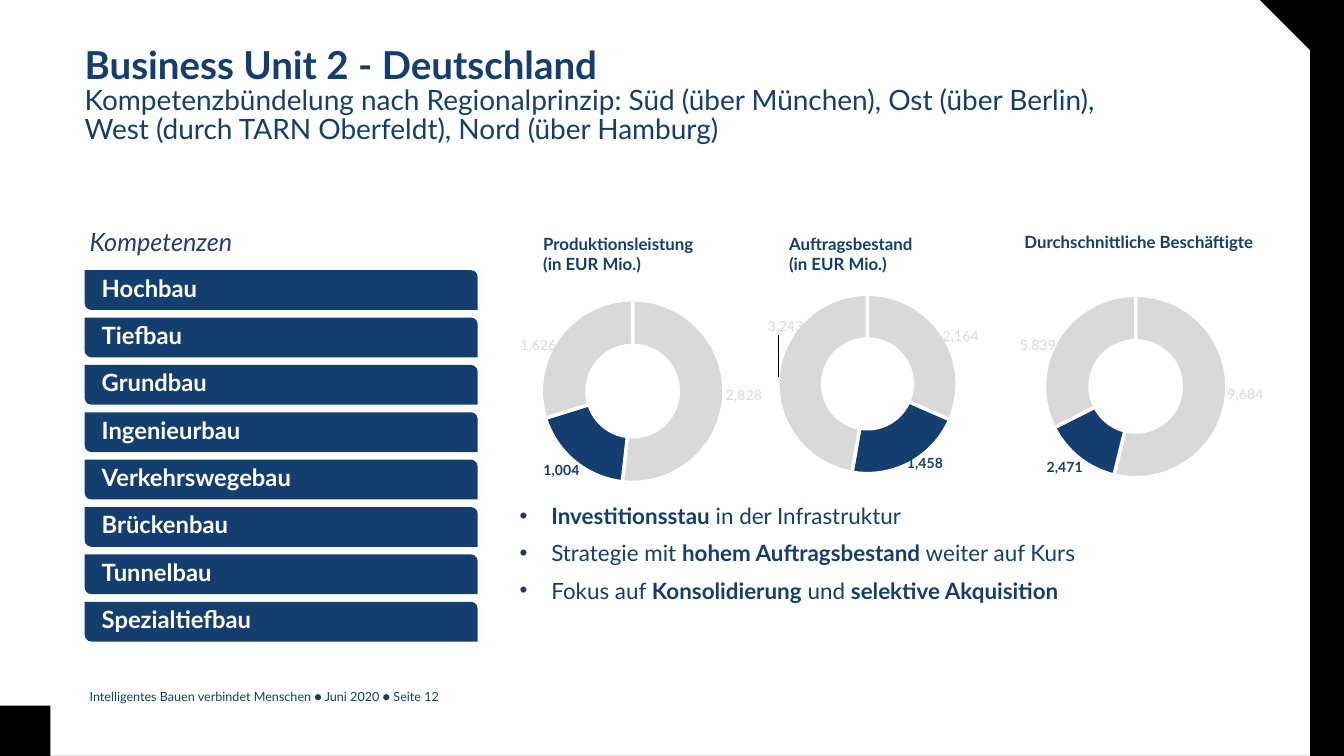
from math import cos, pi, radians, sin

from lxml.etree import SubElement
from pptx import Presentation
from pptx.chart.data import CategoryChartData
from pptx.dml.color import RGBColor
from pptx.enum.chart import XL_CHART_TYPE
from pptx.enum.shapes import MSO_SHAPE
from pptx.enum.text import MSO_ANCHOR, MSO_AUTO_SIZE, PP_ALIGN
from pptx.oxml.ns import qn
from pptx.util import Inches, Pt

FONT = "Lato"
NAVY, GREY, WHITE, BLACK = "143E6F", "D9D9D9", "FFFFFF", "000000"
CHART_WIDTH, CHART_HEIGHT = 5.36, 3.9
RING_RADIUS = 1.31  # middle of the doughnut ring, where labels sit by default

COMPETENCES = ["Hochbau", "Tiefbau", "Grundbau", "Ingenieurbau",
               "Verkehrswegebau", "Brückenbau", "Tunnelbau", "Spezialtiefbau"]
BULLETS = [
    [("Investitionsstau", True), (" in der Infrastruktur", False)],
    [("Strategie mit ", False), ("hohem Auftragsbestand", True), (" weiter auf Kurs", False)],
    [("Fokus auf ", False), ("Konsolidierung", True), (" und ", False),
     ("selektive Akquisition", True)],
]
# heading, heading place, chart place, values, label centres from the chart centre
KEY_FIGURES = [
    ("Produktionsleistung\v(in EUR Mio.)", (10.68, 4.58), (9.91, 5.81),
     (2828, 1004, 1626), ((2.16, 0.08), (-1.38, 1.53), (-1.83, -0.89))),
    ("Auftragsbestand\v(in EUR Mio.)", (15.56, 4.58), (14.5, 5.7),
     (2164, 1458, 3243), ((1.83, -0.94), (1.13, 1.54), (-1.6, -1.14))),
    ("Durchschnittliche Beschäftigte", (20.23, 4.54), (19.89, 5.72),
     (9684, 2471, 5839), ((2.13, 0.15), (-1.38, 1.56), (-1.9, -0.8))),
]


def color(value):
    return RGBColor.from_string(value)


def paint(shape, value):
    shape.shadow.inherit = False
    shape.fill.solid()
    shape.fill.fore_color.rgb = color(value)
    shape.line.fill.background()


def format_font(font, size, value=NAVY, bold=False, italic=False):
    font.name, font.size = FONT, Pt(size)
    font.bold, font.italic = bold, italic
    font.color.rgb = color(value)


def set_box(shape, left, top, width, height):
    shape.left, shape.top = Inches(left), Inches(top)
    shape.width, shape.height = Inches(width), Inches(height)


def clear_margins(text_frame):
    text_frame.margin_left = text_frame.margin_right = 0
    text_frame.margin_top = text_frame.margin_bottom = 0
    text_frame.auto_size = MSO_AUTO_SIZE.NONE
    text_frame.vertical_anchor = MSO_ANCHOR.TOP


def add_text(slide, text, left, top, width, height, size, **style):
    box = slide.shapes.add_textbox(Inches(left), Inches(top), Inches(width), Inches(height))
    box.text_frame.word_wrap = True
    paragraph = box.text_frame.paragraphs[0]
    paragraph.text = text
    for run in paragraph.runs:
        format_font(run.font, size, **style)


def add_frame(slide, width, height, side=0.21, edge=0.14, radius=2.15):
    """Black border whose opening is rounded at top right and bottom left."""
    def arc(x, y, start):
        angles = [radians(start + 3 * step) for step in range(31)]
        return [(x + radius * cos(a), y + radius * sin(a)) for a in angles]

    opening = [(side, edge)]
    opening += arc(width - side - radius, edge + radius, 270)
    opening += [(width - side, height - edge)]
    opening += arc(side + radius, height - edge - radius, 90)
    builder = slide.shapes.build_freeform(0, 0, scale=Inches(1))
    builder.add_line_segments([(width, 0), (width, height), (0, height)])
    builder.move_to(*opening[0])
    builder.add_line_segments(opening[1:])
    paint(builder.convert_to_shape(), BLACK)


def fill_title(title, left, top, width, height):
    set_box(title, left, top, width, height)
    clear_margins(title.text_frame)
    paragraph = title.text_frame.paragraphs[0]
    paragraph.text = ("Business Unit 2 - Deutschland\v"
                      "Kompetenzbündelung nach Regionalprinzip: Süd (über München), "
                      "Ost (über Berlin),\v"
                      "West (durch TARN Oberfeldt), Nord (über Hamburg)")
    paragraph.alignment = PP_ALIGN.LEFT
    paragraph.line_spacing = 0.85
    heading, *subtitle = paragraph.runs
    format_font(heading.font, 55, bold=True)
    for run in subtitle:
        format_font(run.font, 40)


def add_competences(slide, left, top, width, bar_height=0.79, pitch=0.94):
    add_text(slide, "Kompetenzen", left, top, 3.25, 0.71, 36, value="273D71", italic=True)
    for index, name in enumerate(COMPETENCES):
        bar = slide.shapes.add_shape(
            MSO_SHAPE.ROUND_2_DIAG_RECTANGLE, Inches(left),
            Inches(top + 0.92 + index * pitch), Inches(width), Inches(bar_height))
        bar.adjustments[0], bar.adjustments[1] = 0, 0.17
        paint(bar, NAVY)
        text_frame = bar.text_frame
        text_frame.margin_left = Inches(0.3)
        text_frame.margin_top, text_frame.margin_bottom = 0, Inches(0.1)
        text_frame.vertical_anchor = MSO_ANCHOR.MIDDLE
        text_frame.text = name
        text_frame.paragraphs[0].alignment = PP_ALIGN.LEFT
        format_font(text_frame.paragraphs[0].runs[0].font, 34, WHITE, bold=True)


def move_label(label, x, y):
    """Shift a data label from its default place by a share of the chart size."""
    element = label._get_or_add_dLbl()
    for old in element.findall(qn("c:layout")):
        element.remove(old)
    layout = SubElement(element, qn("c:layout"))
    manual = SubElement(layout, qn("c:manualLayout"))
    for axis, shift in (("x", x), ("y", y)):
        SubElement(manual, qn(f"c:{axis}")).set("val", f"{shift:.3f}")
    element.insert(1, layout)


def add_doughnut(slide, left, top, values, label_centres):
    data = CategoryChartData(number_format="#,##0")
    data.categories = ["1", "2", "3"]
    data.add_series("Series 1", values)
    chart = slide.shapes.add_chart(
        XL_CHART_TYPE.DOUGHNUT, Inches(left), Inches(top),
        Inches(CHART_WIDTH), Inches(CHART_HEIGHT), data).chart
    chart.has_legend = chart.has_title = False
    chart.font.name, chart.font.size = FONT, Pt(20)
    plot = chart.plots[0]
    plot.vary_by_categories = False
    plot._element.find(qn("c:holeSize")).set("val", "70")

    passed = 0
    for index, (value, (x, y)) in enumerate(zip(values, label_centres)):
        point = plot.series[0].points[index]
        shade = NAVY if index == 1 else GREY
        point.format.fill.solid()
        point.format.fill.fore_color.rgb = color(shade)
        point.format.line.color.rgb = color(WHITE)
        point.format.line.width = Pt(5)
        format_font(point.data_label.font, 20, shade, bold=index == 1)
        angle = 2 * pi * (passed + value / 2) / sum(values)
        move_label(point.data_label, (x - RING_RADIUS * sin(angle)) / CHART_WIDTH,
                   (y + RING_RADIUS * cos(angle)) / CHART_HEIGHT)
        passed += value


def add_key_figures(slide):
    for heading, heading_place, chart_place, values, label_centres in KEY_FIGURES:
        add_doughnut(slide, *chart_place, values, label_centres)
        add_text(slide, heading, *heading_place, 5.02, 0.91, 24, bold=True)


def fill_bullets(body, left, top, width, height):
    set_box(body, left, top, width, height)
    clear_margins(body.text_frame)
    for index, parts in enumerate(BULLETS):
        text_frame = body.text_frame
        paragraph = text_frame.add_paragraph() if index else text_frame.paragraphs[0]
        properties = paragraph._p.get_or_add_pPr()
        properties.set("marL", str(Inches(0.63)))
        properties.set("indent", str(-Inches(0.63)))
        SubElement(properties, qn("a:buFont")).set("typeface", "Arial")
        SubElement(properties, qn("a:buChar")).set("char", "•")
        paragraph.space_before = Pt(15 if index else 0)
        for text, bold in parts:
            run = paragraph.add_run()
            run.text = text
            format_font(run.font, 32, bold=bold)


def main():
    presentation = Presentation()
    presentation.slide_width, presentation.slide_height = Inches(26.67), Inches(15)
    slide = presentation.slides.add_slide(presentation.slide_layouts[1])
    add_frame(slide, 26.67, 15)
    fill_title(slide.shapes.title, 1.68, 0.96, 23.31, 1.73)
    add_competences(slide, 1.68, 4.44, 7.8)
    add_key_figures(slide)
    fill_bullets(slide.placeholders[1], 10.31, 9.96, 13.99, 1.9)
    add_text(slide, "Intelligentes Bauen verbindet Menschen ● Juni 2020 ● Seite 12",
             1.68, 13.62, 11.55, 0.41, 18)
    presentation.save("out.pptx")


if __name__ == "__main__":
    main()
